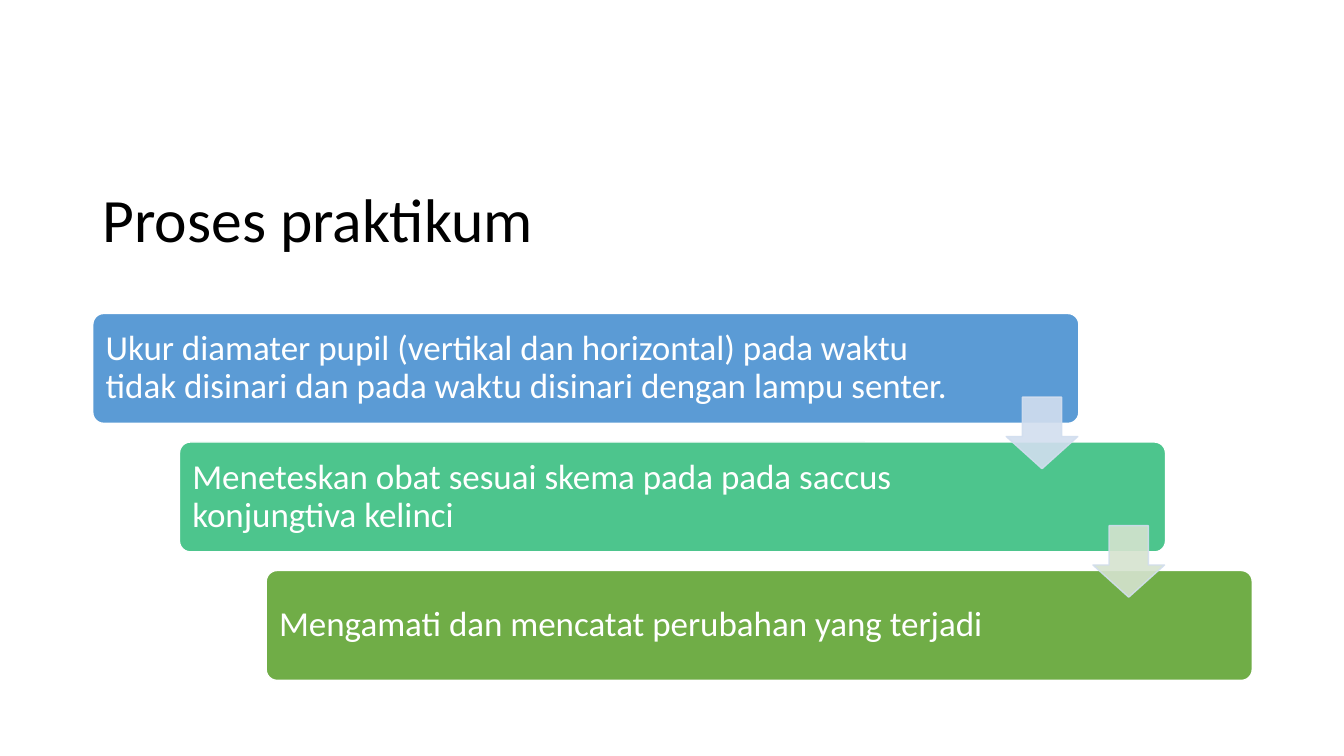
from dataclasses import dataclass

from lxml import etree
from pptx import Presentation
from pptx.dml.color import RGBColor
from pptx.enum.shapes import MSO_SHAPE
from pptx.enum.text import MSO_ANCHOR, PP_ALIGN
from pptx.oxml.ns import qn
from pptx.shapes.autoshape import Shape
from pptx.slide import Slide
from pptx.util import Inches, Pt

COLORS = {
    "title": "000000",
    "white": "FFFFFF",
    "measure": "5B9BD5",
    "apply": "4DC58D",
    "observe": "70AD47",
    "arrow_blue": "D2DEEF",
    "arrow_green": "D5E3CF",
}
FONT = "Calibri"
STEP_LEFT, STEP_TOP = 0.92, 3.11
STEP_WIDTH, STEP_HEIGHT = 9.78, 1.09
SHIFT_X, SHIFT_Y = 0.86, 1.275
TEXT_INSET = 0.03
ARROW_LEFT, ARROW_TOP, ARROW_SIZE = 9.98, 3.94, 0.71
ARROW_OPACITY = 90


@dataclass(frozen=True)
class Step:
    text: str
    color: str
    text_width: float
    arrow_color: str | None = None


STEPS = [
    Step("Ukur diamater pupil (vertikal dan horizontal) pada waktu tidak disinari "
         "dan pada waktu disinari dengan lampu senter.",
         "measure", 8.59, "arrow_blue"),
    Step("Meneteskan obat sesuai skema pada pada saccus konjungtiva kelinci",
         "apply", 8.14, "arrow_green"),
    Step("Mengamati dan mencatat perubahan yang terjadi", "observe", 8.14),
]


def rgb(name: str) -> RGBColor:
    return RGBColor.from_string(COLORS[name])


def add_text(slide: Slide, text: str, left: float, top: float, width: float,
             height: float, size: float, color: str, inset_y: float) -> None:
    box = slide.shapes.add_textbox(
        Inches(left), Inches(top), Inches(width), Inches(height))
    frame = box.text_frame
    frame.word_wrap = True
    frame.vertical_anchor = MSO_ANCHOR.MIDDLE
    frame.margin_left = frame.margin_right = Inches(0.1)
    frame.margin_top = frame.margin_bottom = Inches(inset_y)
    frame.text = text
    paragraph = frame.paragraphs[0]
    paragraph.alignment = PP_ALIGN.LEFT
    paragraph.line_spacing = 0.9
    font = paragraph.runs[0].font
    font.name, font.size, font.color.rgb = FONT, Pt(size), rgb(color)


def add_block(slide: Slide, kind: MSO_SHAPE, left: float, top: float, width: float,
              height: float, adjustments: list[float], fill: str, line: str) -> Shape:
    block = slide.shapes.add_shape(
        kind, Inches(left), Inches(top), Inches(width), Inches(height))
    block.shadow.inherit = False
    for index, value in enumerate(adjustments):
        block.adjustments[index] = value
    block.fill.solid()
    block.fill.fore_color.rgb = rgb(fill)
    block.line.color.rgb = rgb(line)
    block.line.width = Pt(1)
    return block


def set_opacity(block: Shape, percent: int) -> None:
    """Apply the opacity to both fill and outline."""
    for color in block.element.spPr.iter(qn("a:srgbClr")):
        etree.SubElement(color, qn("a:alpha")).set("val", str(percent * 1000))


def add_step(slide: Slide, index: int, step: Step) -> None:
    left, top = STEP_LEFT + index * SHIFT_X, STEP_TOP + index * SHIFT_Y
    add_block(slide, MSO_SHAPE.ROUNDED_RECTANGLE, left, top, STEP_WIDTH, STEP_HEIGHT,
              [0.1], step.color, "white")
    add_text(slide, step.text, left + TEXT_INSET, top + TEXT_INSET, step.text_width,
             STEP_HEIGHT - 2 * TEXT_INSET, 25, "white", 0.1)


def add_arrow(slide: Slide, index: int, color: str) -> None:
    arrow = add_block(slide, MSO_SHAPE.DOWN_ARROW, ARROW_LEFT + index * SHIFT_X,
                      ARROW_TOP + index * SHIFT_Y, ARROW_SIZE, ARROW_SIZE,
                      [0.55, 0.45], color, "arrow_blue")
    set_opacity(arrow, ARROW_OPACITY)


def main() -> None:
    presentation = Presentation()
    presentation.slide_width = Inches(13.33)
    presentation.slide_height = Inches(7.5)
    slide = presentation.slides.add_slide(presentation.slide_layouts[6])

    add_text(slide, "Proses praktikum", 0.92, 1.51, 11.5, 1.4, 44, "title", 0.05)
    for index, step in enumerate(STEPS):
        add_step(slide, index, step)
    for index, step in enumerate(STEPS):
        if step.arrow_color:
            add_arrow(slide, index, step.arrow_color)

    presentation.save("out.pptx")


if __name__ == "__main__":
    main()
